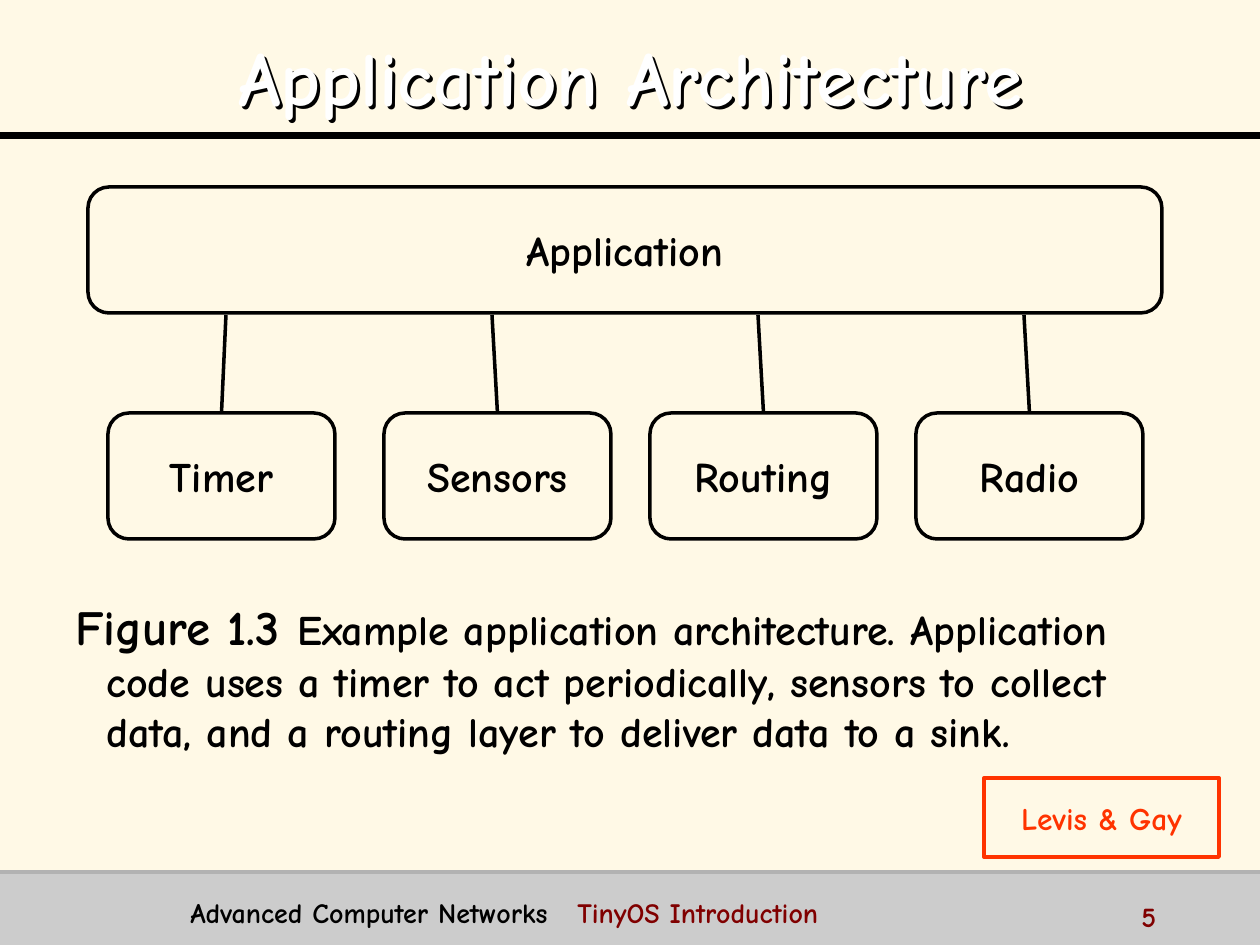
import pptx
import pptx.util
import pptx.dml.color
import pptx.enum.shapes
import pptx.enum.text
import pptx.oxml.ns
import lxml.etree

FONT = "Comic Neue"
COLORS = {"paper": "FFF9E6", "band": "CCCCCC", "rule": "B2B2B2", "black": "000000",
          "white": "FFFFFF", "red": "FF3300", "maroon": "800000"}

TITLE = "Application Architecture"
MODULES = [("Timer", 108), ("Sensors", 384), ("Routing", 650), ("Radio", 916)]  # name, left
CAPTION = [("Figure 1.3 ", 28, "black"),
           ("Example application architecture. Application code uses a timer to act "
            "periodically, sensors to collect data, and a routing layer to deliver data "
            "to a sink.", 24, "black")]
FOOTER = [("Advanced Computer Networks\t", 16, "black"),
          ("TinyOS Introduction", 16, "maroon")]

SLIDE_W, SLIDE_H = 1260, 945
FOOTER_TOP = 872
TITLE_LAYERS = [(3, "black"), (0, "white")]  # offset, color: hard shadow, then face
APP_BOX = (88, 187, 1074, 126)
MODULE_TOP, MODULE_W, MODULE_H = 413, 227, 126
LINK_TOP, LINK_LEFT, LINK_STEP = 315, 226, 266

SHAPE = pptx.enum.shapes.MSO_SHAPE
ALIGN = pptx.enum.text.PP_ALIGN
ANCHOR = pptx.enum.text.MSO_ANCHOR


def px(n):
    return pptx.util.Emu(round(n * 914400 / 126))


def rgb(name):
    return pptx.dml.color.RGBColor.from_string(COLORS[name])


def write(sp, runs, align=ALIGN.LEFT, anchor=ANCHOR.TOP, wrap=True):
    """Fill a shape's first paragraph with (text, size, color) runs."""
    tf = sp.text_frame
    tf.word_wrap = wrap
    tf.vertical_anchor = anchor
    p = tf.paragraphs[0]
    p.alignment = align
    for text, size, color in runs:
        r = p.add_run()
        r.text = text
        r.font.name = FONT
        r.font.size = pptx.util.Pt(size)
        r.font.bold = True
        r.font.color.rgb = rgb(color)
    return p


def add_text(slide, box, runs, **fmt):
    return write(slide.shapes.add_textbox(*map(px, box)), runs, **fmt)


def add_box(slide, kind, box, fill=None, line=None, width=2):
    sp = slide.shapes.add_shape(kind, *map(px, box))
    sp.shadow.inherit = False
    if fill:
        sp.fill.solid()
        sp.fill.fore_color.rgb = rgb(fill)
    else:
        sp.fill.background()
    if line:
        sp.line.color.rgb = rgb(line)
        sp.line.width = pptx.util.Pt(width)
    else:
        sp.line.fill.background()
    return sp


def add_label_box(slide, kind, box, text, size=24, color="black", width=2):
    sp = add_box(slide, kind, box, line=color, width=width)
    write(sp, [(text, size, color)], align=ALIGN.CENTER, anchor=ANCHOR.MIDDLE, wrap=False)
    return sp


def add_line(slide, x1, y1, x2, y2, color="black", width=2):
    line = slide.shapes.add_connector(pptx.enum.shapes.MSO_CONNECTOR.STRAIGHT,
                                      *map(px, (x1, y1, x2, y2)))
    line.line.color.rgb = rgb(color)
    line.line.width = pptx.util.Pt(width)
    lxml.etree.SubElement(line._element.spPr, pptx.oxml.ns.qn("a:effectLst"))
    return line


def set_tab(p, pos):
    tabs = lxml.etree.SubElement(p._p.get_or_add_pPr(), pptx.oxml.ns.qn("a:tabLst"))
    lxml.etree.SubElement(tabs, pptx.oxml.ns.qn("a:tab"), pos=str(px(pos)), algn="l")


def main():
    prs = pptx.Presentation()
    prs.slide_width, prs.slide_height = px(SLIDE_W), px(SLIDE_H)
    slide = prs.slides.add_slide(prs.slide_layouts[6])
    slide.background.fill.solid()
    slide.background.fill.fore_color.rgb = rgb("paper")

    add_box(slide, SHAPE.RECTANGLE, (0, FOOTER_TOP, SLIDE_W, SLIDE_H - FOOTER_TOP), fill="band")
    add_line(slide, 0, 136, SLIDE_W, 136, width=4)
    add_line(slide, 0, FOOTER_TOP, SLIDE_W, FOOTER_TOP, color="rule")

    for offset, color in TITLE_LAYERS:
        p = add_text(slide, (25 + offset, 16 + offset, 1211, 110), [(TITLE, 44, color)],
                     align=ALIGN.CENTER, anchor=ANCHOR.MIDDLE)
        p.line_spacing = 1.1

    add_label_box(slide, SHAPE.ROUNDED_RECTANGLE, APP_BOX, "Application")
    for i, (name, left) in enumerate(MODULES):
        module = add_label_box(slide, SHAPE.ROUNDED_RECTANGLE,
                               (left, MODULE_TOP, MODULE_W, MODULE_H), name)
        x = LINK_LEFT + i * LINK_STEP
        link = add_line(slide, x, LINK_TOP, left + MODULE_W / 2, MODULE_TOP)
        link.end_connect(module, 0)

    p = add_text(slide, (63, 590, 1134, 249), CAPTION)
    pPr = p._p.get_or_add_pPr()
    pPr.set("marL", str(px(31)))
    pPr.set("indent", str(px(-31)))

    add_label_box(slide, SHAPE.RECTANGLE, (984, 778, 235, 79), "Levis & Gay",
                  size=18, color="red", width=2.25)
    set_tab(add_text(slide, (178, 889, 917, 39), FOOTER), 387)
    add_text(slide, (1129, 893, 126, 32), [("5", 16, "maroon")])

    prs.save("out.pptx")


if __name__ == "__main__":
    main()
